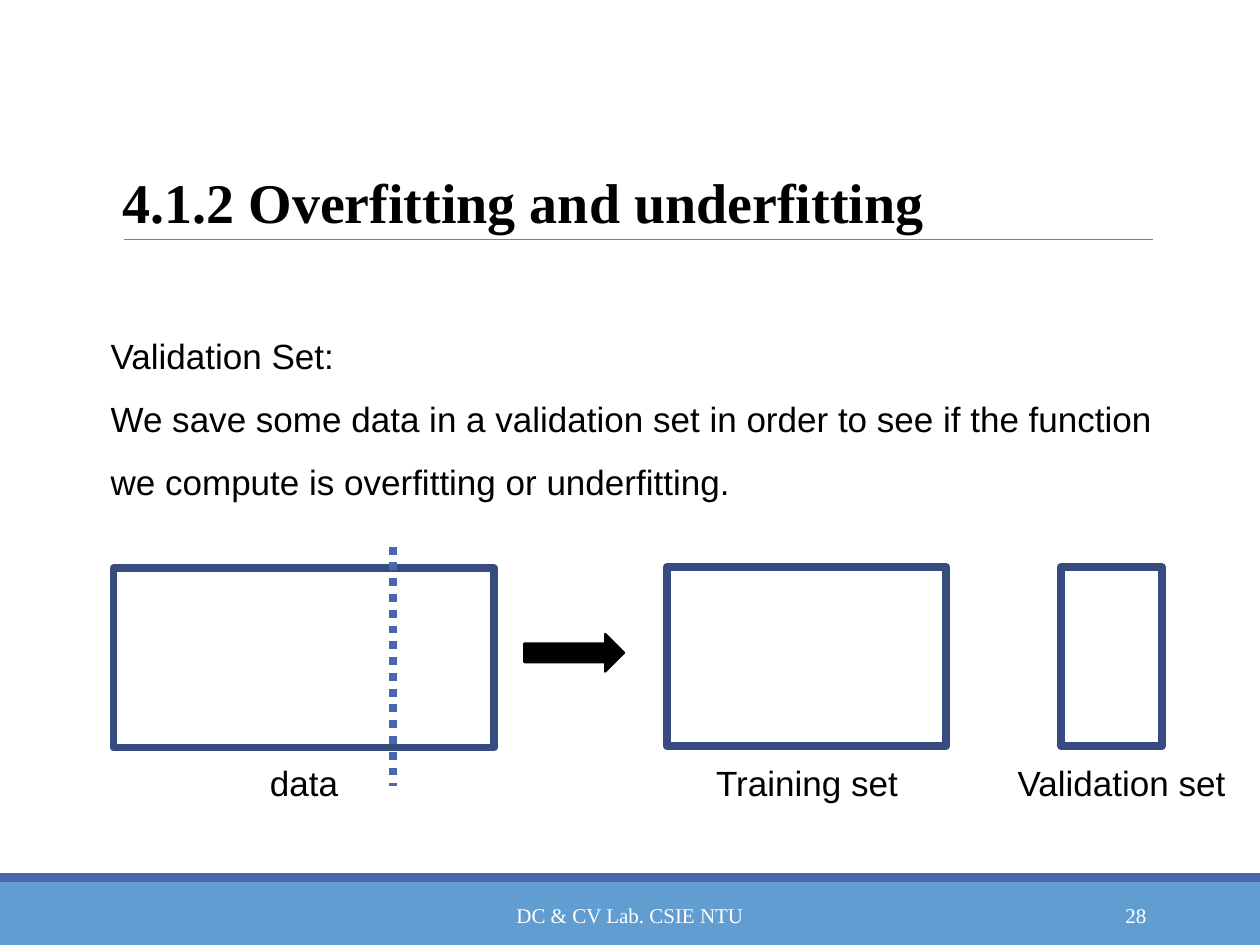
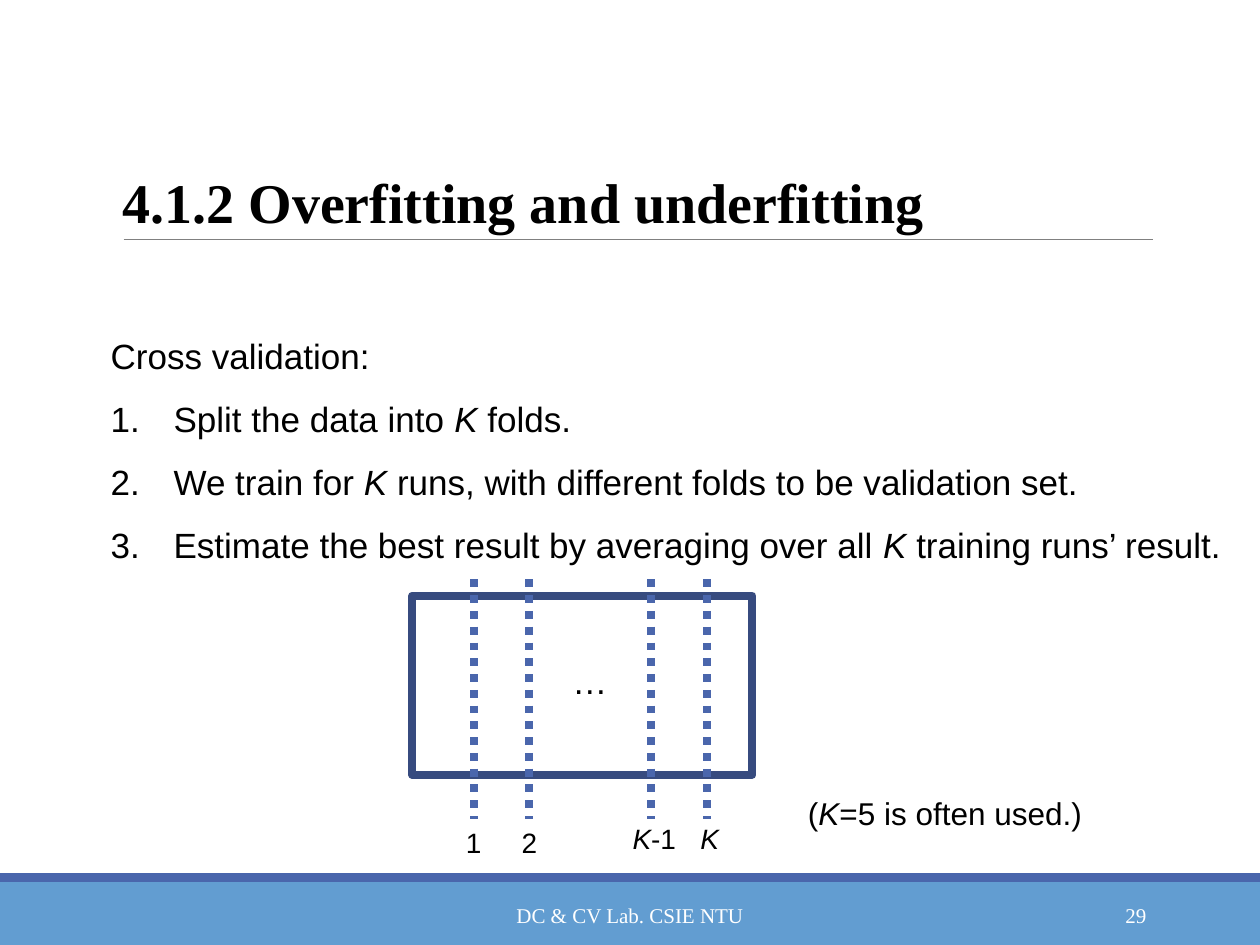
"""Build two slides on validation sets and cross validation."""
from lxml import etree
from pptx import Presentation
from pptx import util as u
from pptx.dml.color import RGBColor
from pptx.enum import dml, shapes, text
from pptx.oxml.ns import qn

COLORS = {
    "black": "000000",
    "white": "FFFFFF",
    "band": "629DD1",
    "accent": "4A66AC",
    "outline": "374B7F",
    "rule": "808080",
}
BODY_FONT = "Arial"
TITLE_FONT = "Times New Roman"
TITLE = "4.1.2 Overfitting and underfitting"
FOOTER = "DC & CV Lab. CSIE NTU"
SLIDE_WIDTH, SLIDE_HEIGHT = 25.4, 19.05
BOX_HEIGHT = 3.61
SPLIT_HEIGHT = 4.83


def color(name):
    """Return the named colour as an RGB value."""
    return RGBColor.from_string(COLORS[name])


def number_paragraph(paragraph):
    """Give a paragraph an automatic number and a hanging indent."""
    properties = paragraph._p.get_or_add_pPr()
    properties.set("marL", str(u.Cm(1.27)))
    properties.set("indent", str(-u.Cm(1.27)))
    etree.SubElement(properties, qn("a:buFont"), typeface="+mj-lt")
    etree.SubElement(properties, qn("a:buAutoNum"), type="arabicPeriod")


def add_text(slide, lines, left, top, width, height, *, size=20, font=BODY_FONT,
             fill="black", bold=False, align="LEFT", anchor="TOP", wrap=True,
             spacing=None, numbered_from=None, insets=(0.25, 0.13)):
    """Add a text box, one paragraph per line; *asterisks* mark italics."""
    box = slide.shapes.add_textbox(u.Cm(left), u.Cm(top), u.Cm(width), u.Cm(height))
    frame = box.text_frame
    frame.word_wrap = wrap
    frame.vertical_anchor = text.MSO_ANCHOR[anchor]
    frame.margin_left = frame.margin_right = u.Cm(insets[0])
    frame.margin_top = frame.margin_bottom = u.Cm(insets[1])
    for index, line in enumerate(lines):
        paragraph = frame.add_paragraph() if index else frame.paragraphs[0]
        paragraph.alignment = text.PP_ALIGN[align]
        if spacing:
            paragraph.line_spacing = spacing
        if numbered_from is not None and index >= numbered_from:
            number_paragraph(paragraph)
        for part, words in enumerate(line.split("*")):
            if words:
                run = paragraph.add_run()
                run.text = words
                run.font.name = font
                run.font.size = u.Pt(size)
                run.font.bold = bold
                run.font.italic = part % 2 == 1
                run.font.color.rgb = color(fill)


def add_label(slide, words, center, top, width, height=1.12, size=20):
    """Add a one-line label centred on a horizontal position."""
    add_text(slide, [words], center - width / 2, top, width, height,
             size=size, align="CENTER", wrap=False)


def add_body(slide, lines, width, numbered_from=None):
    """Add the widely spaced main text under the title."""
    add_text(slide, lines, 1.98, 6.2, width, 5.23, spacing=1.5,
             numbered_from=numbered_from)


def add_block(slide, left, top, width, height, *, kind="RECTANGLE",
              fill=None, line=None, weight=4.5):
    """Add a preset shape with an optional fill and outline."""
    shape = slide.shapes.add_shape(shapes.MSO_SHAPE[kind], u.Cm(left), u.Cm(top),
                                   u.Cm(width), u.Cm(height))
    shape.shadow.inherit = False
    if fill:
        shape.fill.solid()
        shape.fill.fore_color.rgb = color(fill)
    else:
        shape.fill.background()
    if line:
        shape.line.color.rgb = color(line)
        shape.line.width = u.Pt(weight)
    else:
        shape.line.fill.background()


def add_data_box(slide, left, top, width):
    """Add an outlined box that stands for a set of data."""
    add_block(slide, left, top, width, BOX_HEIGHT, line="outline")


def add_line(slide, start, end, line, weight, dash=None):
    """Add a straight line between two points."""
    connector = slide.shapes.add_connector(
        shapes.MSO_CONNECTOR.STRAIGHT, *(u.Cm(value) for value in (*start, *end)))
    connector.line.color.rgb = color(line)
    connector.line.width = u.Pt(weight)
    if dash:
        connector.line.dash_style = dash
    etree.SubElement(connector._element.spPr, qn("a:effectLst"))


def add_split(slide, center, top):
    """Add a dotted vertical line that cuts through a data box."""
    add_line(slide, (center, top), (center, top + SPLIT_HEIGHT), "accent", 4.5,
             dml.MSO_LINE.ROUND_DOT)


def add_base_slide(presentation, number):
    """Add a slide with the shared title, rule, bands and footer."""
    slide = presentation.slides.add_slide(presentation.slide_layouts[6])
    add_block(slide, 0, 17.78, SLIDE_WIDTH, 1.27, fill="band")
    add_block(slide, 0, 17.6, SLIDE_WIDTH, 0.18, fill="accent")
    add_line(slide, (2.49, 4.83), (23.24, 4.83), "rule", 0.5)
    add_text(slide, [TITLE], 2.29, 0.79, 20.96, 4.04, size=32, font=TITLE_FONT,
             bold=True, anchor="BOTTOM", insets=(0.18, 0.1))
    for words, left, width, align in ((FOOTER, 7.67, 10.06, "CENTER"),
                                      (str(number), 20.62, 2.74, "RIGHT")):
        add_text(slide, [words], left, 17.93, width, 1.02, size=12, font=TITLE_FONT,
                 fill="white", align=align, anchor="MIDDLE")
    return slide


def add_validation_slide(presentation):
    """Show data being split into a training set and a validation set."""
    slide = add_base_slide(presentation, 28)
    add_body(slide, [
        "Validation Set:",
        "We save some data in a validation set in order to see if the function "
        "we compute is overfitting or underfitting.",
    ], 22.53)
    for name, left, top, width, center, label_width in (
            ("data", 2.29, 11.46, 7.67, 6.13, 1.91),
            ("Training set", 13.44, 11.43, 5.64, 16.27, 4.24),
            ("Validation set", 21.39, 11.43, 2.03, 22.61, 4.8)):
        add_data_box(slide, left, top, width)
        add_label(slide, name, center, 15.22, label_width)
    add_split(slide, 7.92, 11.02)
    add_block(slide, 10.57, 12.78, 2.01, 0.76, kind="RIGHT_ARROW",
              fill="black", line="black", weight=1.25)


def add_cross_validation_slide(presentation):
    """Show data being cut into K folds."""
    slide = add_base_slide(presentation, 29)
    add_body(slide, [
        "Cross validation:",
        "Split the data into *K* folds.",
        "We train for *K* runs, with different folds to be validation set.",
        "Estimate the best result by averaging over all *K* training runs’ result.",
    ], 23.7, numbered_from=1)
    add_data_box(slide, 8.31, 12.01, 6.86)
    for name, center, label_top, label_width in (
            ("1", 9.55, 16.51, 0.84), ("2", 10.67, 16.51, 0.84),
            ("*K*-1", 13.13, 16.43, 1.4), ("*K*", 14.25, 16.43, 0.89)):
        add_split(slide, center, 11.68)
        add_label(slide, name, center + (0.06 if "K" in name else 0), label_top,
                  label_width, height=0.94, size=16)
    add_label(slide, "…", 11.89, 13.16, 1.22)
    add_label(slide, "(*K*=5 is often used.)", 19.05, 15.88, 6.1, height=1.02, size=18)


def main():
    """Build and save the presentation."""
    presentation = Presentation()
    presentation.slide_width = u.Cm(SLIDE_WIDTH)
    presentation.slide_height = u.Cm(SLIDE_HEIGHT)
    add_validation_slide(presentation)
    add_cross_validation_slide(presentation)
    presentation.save("out.pptx")


if __name__ == "__main__":
    main()
